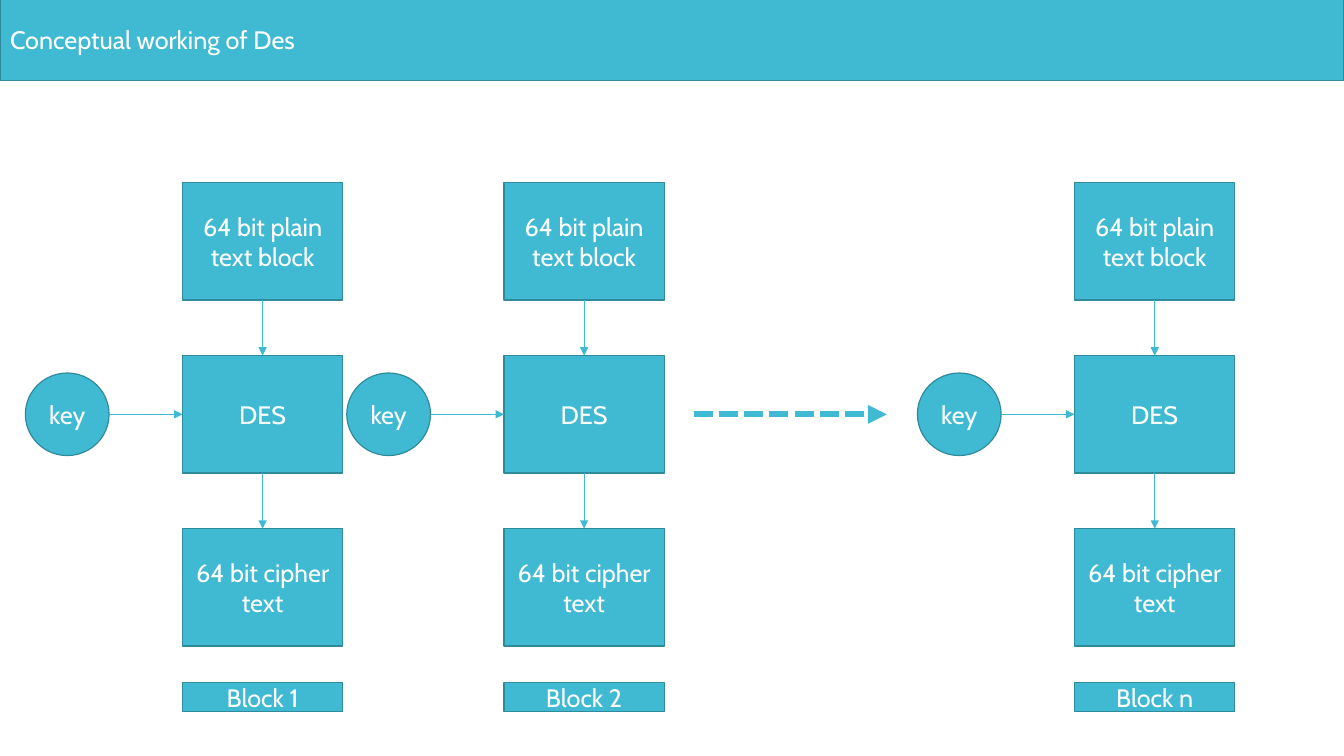
from dataclasses import dataclass

from lxml import etree
from pptx import Presentation
from pptx.dml.color import RGBColor
from pptx.enum.dml import MSO_LINE
from pptx.enum.shapes import MSO_CONNECTOR, MSO_SHAPE
from pptx.enum.text import MSO_ANCHOR, MSO_AUTO_SIZE, PP_ALIGN
from pptx.oxml.ns import qn
from pptx.util import Cm, Pt

RECT, OVAL = MSO_SHAPE.RECTANGLE, MSO_SHAPE.OVAL
STRAIGHT, SYS_DASH = MSO_CONNECTOR.STRAIGHT, MSO_LINE.SQUARE_DOT
LEFT, CENTER, MIDDLE = PP_ALIGN.LEFT, PP_ALIGN.CENTER, MSO_ANCHOR.MIDDLE
NO_FIT = MSO_AUTO_SIZE.NONE
TOP_SIDE, LEFT_SIDE, BOTTOM_SIDE = 0, 1, 2

SLIDE_W, SLIDE_H = 33.87, 19.05
BOX_W, BOX_H = 4.04, 2.96
BOX_TOP, BOX_PITCH = 4.6, 4.36
KEY_W, KEY_H, KEY_OFFSET = 2.11, 2.08, 3.96
LABEL_TOP, LABEL_H = 17.2, 0.74
MID_Y = BOX_TOP + BOX_PITCH + BOX_H / 2
STAGES = ["64 bit plain text block", "DES", "64 bit cipher text"]
BLOCKS = [("Block n", 27.08), ("Block 2", 12.7), ("Block 1", 4.6)]


@dataclass
class Theme:
    font: str = "Cabin"
    size: float = 18
    fill: RGBColor = RGBColor(0x40, 0xBA, 0xD2)
    outline: RGBColor = RGBColor(0x2F, 0x8A, 0x9B)
    text: RGBColor = RGBColor(0xFF, 0xFF, 0xFF)
    outline_w: float = 0.85
    arrow_w: float = 0.75
    dash_w: float = 4.5


class Diagram:
    def __init__(self, slide, theme):
        self.slide = slide
        self.theme = theme

    def style(self, sp, text, align):
        t = self.theme
        sp.fill.solid()
        sp.fill.fore_color.rgb = t.fill
        sp.line.color.rgb = t.outline
        sp.line.width = Pt(t.outline_w)
        tf = sp.text_frame
        tf.text = text
        tf.word_wrap = True
        tf.auto_size = NO_FIT
        tf.vertical_anchor = MIDDLE
        p = tf.paragraphs[0]
        p.alignment = align
        font = p.runs[0].font
        font.name, font.size = t.font, Pt(t.size)
        font.color.rgb = t.text

    def title(self, text, top, height):
        sp = self.slide.shapes.title
        sp.left, sp.top = Cm(0), Cm(top)
        sp.width, sp.height = Cm(SLIDE_W), Cm(height)
        self.style(sp, text, LEFT)

    def shape(self, shapes, kind, text, x, y, w, h):
        sp = shapes.add_shape(kind, Cm(x), Cm(y), Cm(w), Cm(h))
        sp.shadow.inherit = False
        self.style(sp, text, CENTER)
        return sp

    def arrow(self, shapes, x1, y1, x2, y2, width):
        line = shapes.add_connector(STRAIGHT, Cm(x1), Cm(y1), Cm(x2), Cm(y2))
        line.line.color.rgb = self.theme.fill
        line.line.width = Pt(width)
        ln = line.line._get_or_add_ln()
        etree.SubElement(ln, qn("a:tailEnd"), type="triangle")
        etree.SubElement(line._element.spPr, qn("a:effectLst"))
        return line

    def block(self, label, x):
        shapes = self.slide.shapes.add_group_shape().shapes
        key_x = x - KEY_OFFSET
        self.shape(shapes, OVAL, "key", key_x, MID_Y - KEY_H / 2, KEY_W, KEY_H)
        boxes = [
            self.shape(shapes, RECT, text, x, BOX_TOP + i * BOX_PITCH, BOX_W, BOX_H)
            for i, text in enumerate(STAGES)
        ]
        mid_x = x + BOX_W / 2
        for i, (upper, lower) in enumerate(zip(boxes, boxes[1:])):
            y = BOX_TOP + i * BOX_PITCH
            link = self.arrow(shapes, mid_x, y + BOX_H, mid_x, y + BOX_PITCH,
                              self.theme.arrow_w)
            link.begin_connect(upper, BOTTOM_SIDE)
            link.end_connect(lower, TOP_SIDE)
        link = self.arrow(shapes, key_x + KEY_W, MID_Y, x, MID_Y, self.theme.arrow_w)
        link.end_connect(boxes[1], LEFT_SIDE)
        self.shape(shapes, RECT, label, x, LABEL_TOP, BOX_W, LABEL_H)

    def continuation(self, x1, x2):
        line = self.arrow(self.slide.shapes, x1, MID_Y, x2, MID_Y, self.theme.dash_w)
        line.line.dash_style = SYS_DASH


def main():
    prs = Presentation()
    prs.slide_width, prs.slide_height = Cm(SLIDE_W), Cm(SLIDE_H)
    s = prs.slides.add_slide(prs.slide_layouts[5])
    diagram = Diagram(s, Theme())
    diagram.title("Conceptual working of Des", -0.05, 2.08)
    for label, x in BLOCKS:
        diagram.block(label, x)
    diagram.continuation(17.48, 22.35)
    prs.save("out.pptx")


if __name__ == "__main__":
    main()
